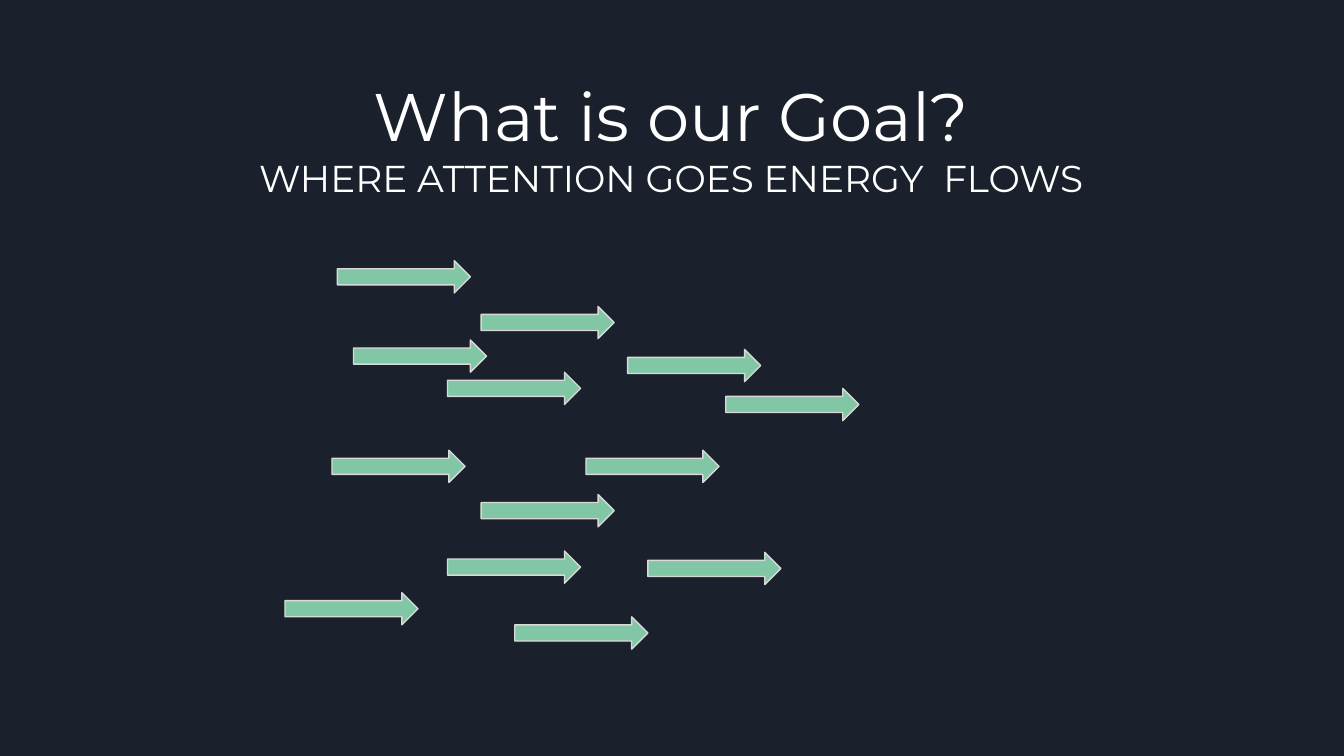
from pptx import Presentation
from pptx.dml.color import RGBColor
from pptx.enum.shapes import MSO_SHAPE
from pptx.enum.text import MSO_ANCHOR, PP_ALIGN
from pptx.util import Inches, Pt

COLORS = {"back": "1B212C", "text": "FFFFFF", "arrow": "82C7A5", "edge": "D9D9D9"}
ARROW = (0.99, 0.24)
SPOTS = [
    (0.51, 0.59), (1.46, 0.34), (0.35, 1.41), (2.24, 1.41), (1.21, 0.83),
    (2.7, 2.17), (1.46, 1.74), (0, 2.47), (1.21, 2.16), (2.55, 0.66),
    (3.28, 0.95), (1.71, 2.65), (0.39, 0),
]


def color(name):
    return RGBColor.from_string(COLORS[name])


def write(para, text, size=20, font="Montserrat", fill="text", align=PP_ALIGN.CENTER):
    para.alignment = align
    run = para.add_run()
    run.text = text
    run.font.size = Pt(size)
    run.font.name = font
    run.font.color.rgb = color(fill)


def add_title(slide, left, top, width, height):
    box = slide.shapes.add_textbox(*map(Inches, (left, top, width, height)))
    frame = box.text_frame
    frame.word_wrap = True
    frame.vertical_anchor = MSO_ANCHOR.MIDDLE
    frame.margin_left = frame.margin_right = Inches(0.1)
    frame.margin_top = frame.margin_bottom = Inches(0.1)
    write(frame.paragraphs[0], "What is our Goal?", size=36)
    write(frame.add_paragraph(), "WHERE ATTENTION GOES ENERGY  FLOWS")


def add_flow(slide, left, top):
    for x, y in SPOTS:
        place = map(Inches, (left + x, top + y, *ARROW))
        arrow = slide.shapes.add_shape(MSO_SHAPE.RIGHT_ARROW, *place)
        arrow.shadow.inherit = False
        arrow.fill.solid()
        arrow.fill.fore_color.rgb = color("arrow")
        arrow.line.color.rgb = color("edge")
        arrow.line.width = Pt(0.75)


def main():
    deck = Presentation()
    deck.slide_width = Inches(10)
    deck.slide_height = Inches(10) * 9 // 16
    slide = deck.slides.add_slide(deck.slide_layouts[6])
    slide.background.fill.solid()
    slide.background.fill.fore_color.rgb = color("back")
    add_title(slide, 1.7, 0.2, 6.59, 1.64)
    add_flow(slide, 2.12, 1.94)
    deck.save("out.pptx")


if __name__ == "__main__":
    main()
